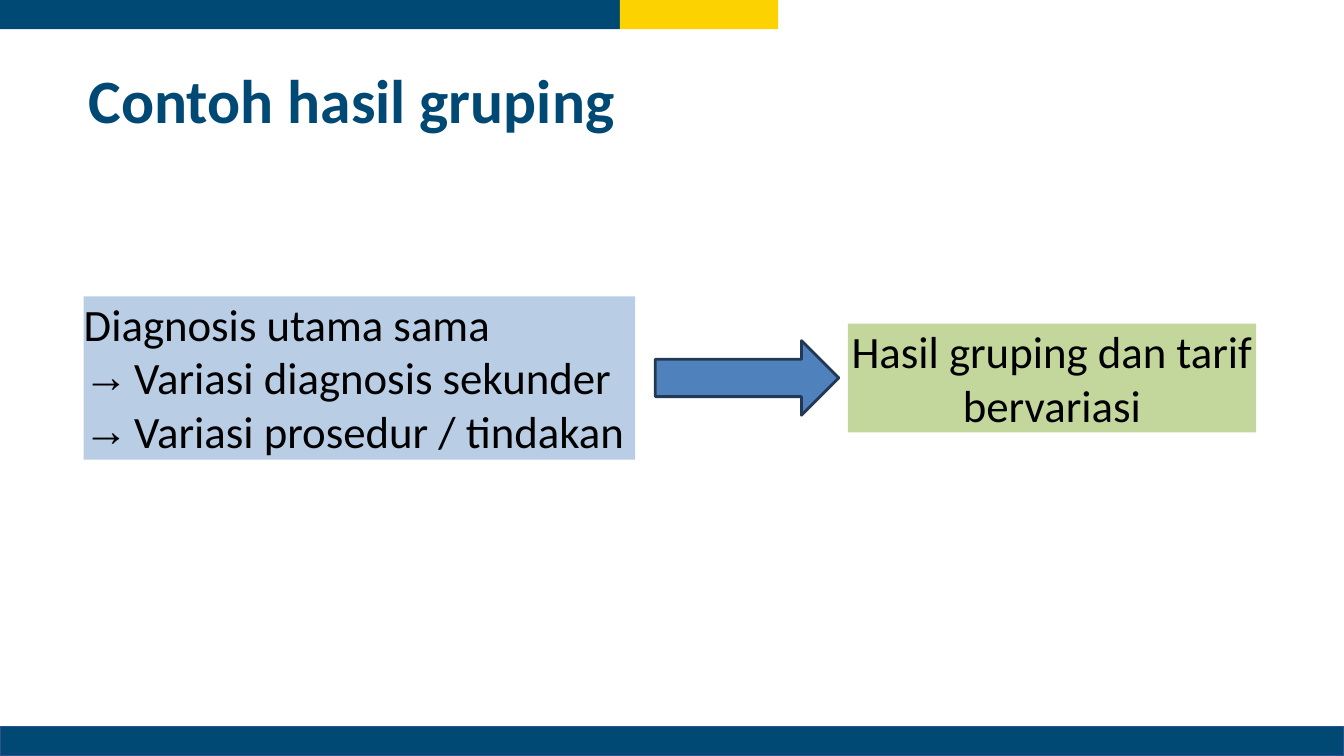
"""Build the slide that shows how one main diagnosis leads to varied grouping results."""
from lxml import etree
from pptx import Presentation, util as u
from pptx.dml.color import RGBColor
from pptx.enum import shapes, text
from pptx.oxml.ns import qn

TITLE = ["Contoh hasil gruping"]
CAUSES = ["Diagnosis utama sama"]
VARIATIONS = ["Variasi diagnosis sekunder", "Variasi prosedur / tindakan"]
RESULT = ["Hasil gruping dan tarif bervariasi"]

COLORS = {
    "navy": "004974", "yellow": "FCD200", "edge": "2E528F", "black": "000000",
    "cause": "B9CDE5", "result": "C3D69B", "arrow": "4F81BD", "arrow_edge": "233953",
}
FONT = "Calibri"
RECT = shapes.MSO_SHAPE.RECTANGLE
ARROW = shapes.MSO_SHAPE.RIGHT_ARROW

# Percentages of the slide's width and height
BAR, SPLIT, YELLOW_W, MIDDLE = 3.87, 46.13, 11.78, 50.33
TITLE_BOX = (6.6, 8.13, 41.03, 9.87)
BARS = [
    ((0, 100 - BAR, 100, BAR), "navy", "edge", 0.96),
    ((0, 0, SPLIT, BAR), "navy", None, 0),
    ((SPLIT, 0, YELLOW_W, BAR), "yellow", None, 0),
]


def row_box(left, width, height):
    return left, MIDDLE - height / 2 - 0.33, width, height


CAUSE_BOX = row_box(6.23, 41.03, 21.6)
RESULT_BOX = row_box(63.09, 30.38, 14.4)
ARROW_BOX = row_box(48.76, 13.65, 9.87)

prs = Presentation()
prs.slide_width, prs.slide_height = u.Inches(13.33), u.Inches(7.5)
s = prs.slides.add_slide(prs.slide_layouts[0])


def rgb(name):
    return RGBColor.from_string(COLORS[name])


def place(box):
    sizes = (prs.slide_width, prs.slide_height) * 2
    return [round(size * share / 100) for size, share in zip(sizes, box)]


def add_block(kind, box, fill, line=None, weight=0):
    sp = s.shapes.add_shape(kind, *place(box))
    sp.shadow.inherit = False
    sp.fill.solid()
    sp.fill.fore_color.rgb = rgb(fill)
    if line:
        sp.line.color.rgb = rgb(line)
        sp.line.width = u.Pt(weight)
    else:
        sp.line.fill.background()
    return sp


def write(sp, lines, bulleted=(), size=32, color="black", bold=False,
          align=text.PP_ALIGN.LEFT, anchor=text.MSO_ANCHOR.TOP):
    tf = sp.text_frame
    tf.word_wrap = True
    tf.auto_size = text.MSO_AUTO_SIZE.NONE
    tf.vertical_anchor = anchor
    tf.margin_left = tf.margin_top = tf.margin_right = tf.margin_bottom = 0
    for i, line in enumerate([*lines, *bulleted]):
        p = tf.paragraphs[0] if i == 0 else tf.add_paragraph()
        p.alignment = align
        p.space_before = u.Pt(0)
        if i >= len(lines):
            pPr = p._p.get_or_add_pPr()
            pPr.set("marL", str(u.Inches(0.5)))
            pPr.set("indent", str(-u.Inches(0.5)))
            etree.SubElement(pPr, qn("a:buChar")).set("char", "→")
        r = p.add_run()
        r.text = line
        r.font.name, r.font.size, r.font.bold = FONT, u.Pt(size), bold
        r.font.color.rgb = rgb(color)


for bar in BARS:
    add_block(RECT, *bar)

title, causes = s.placeholders
for sp, box in ((title, TITLE_BOX), (causes, CAUSE_BOX)):
    sp.left, sp.top, sp.width, sp.height = place(box)
write(title, TITLE, size=44, color="navy", bold=True)
causes.fill.solid()
causes.fill.fore_color.rgb = rgb("cause")
write(causes, CAUSES, VARIATIONS)

write(add_block(RECT, RESULT_BOX, "result"), RESULT, align=text.PP_ALIGN.CENTER)
add_block(ARROW, ARROW_BOX, "arrow", "arrow_edge", 2)

prs.save("out.pptx")
